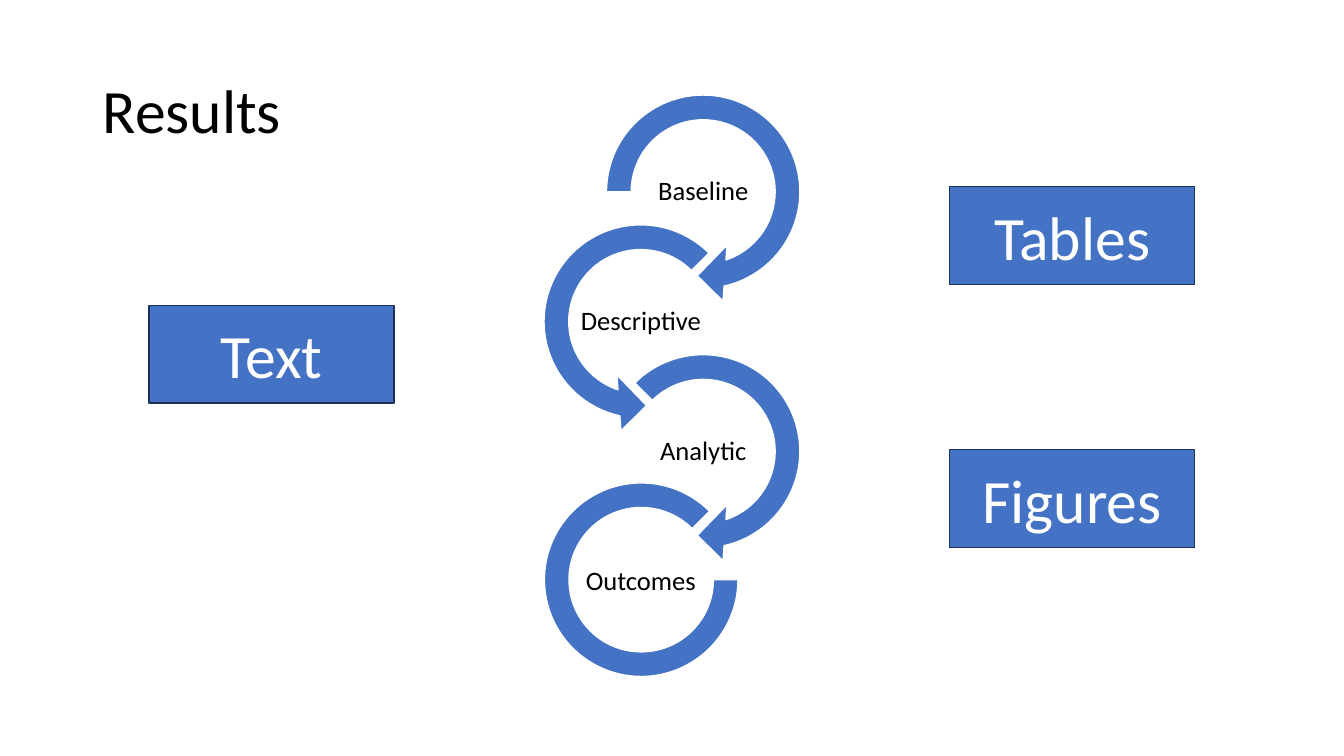
from pptx import Presentation
from pptx.dml.color import RGBColor
from pptx.enum.shapes import MSO_SHAPE as Preset
from pptx.enum.text import MSO_ANCHOR as Anchor, PP_ALIGN as Align
from pptx.util import Inches, Pt

WIDTH, HEIGHT = Inches(13.33), Inches(7.5)
BLUE, NAVY, WHITE, BLACK = "4472C4", "1E3256", "FFFFFF", "000000"

RING_LEFTS = (43.96, 39.31)
RING_TOP, RING_STEP = 10.5, 17.17
RING_SIZE = (16.73, 29.73)
ARC_INSET, ARC_SIZE = (1.2, 1.87), (14.4, 25.6)
LABEL_INSET, LABEL_SIZE = (3.68, 10.8), (9.38, 8.27)
BUTTON_SIZE = (18.23, 12.93)

STAGES = [
    ("Baseline", Preset.CIRCULAR_ARROW, (0.11, 11.42, 45, 108, 0.125)),
    ("Descriptive", Preset.LEFT_CIRCULAR_ARROW, (0.11, 11.42, 63, 189, 0.125)),
    ("Analytic", Preset.CIRCULAR_ARROW, (0.11, 11.42, 45, 135, 0.125)),
    ("Outcomes", Preset.BLOCK_ARC, (0, 189, 0.127)),
]
BUTTONS = [("Text", 11.1, 40.4), ("Tables", 70.67, 24.67), ("Figures", 70.67, 59.47)]

LABEL_FRAME = dict.fromkeys(
    ("margin_left", "margin_top", "margin_right", "margin_bottom"), Inches(0.01)
)
LABEL_PARA = {"alignment": Align.CENTER, "line_spacing": 0.9}


def color(value):
    return RGBColor.from_string(value)


def apply(target, values):
    for name, value in values.items():
        setattr(target, name, value)


def share(left, top, width, height):
    return [
        round(whole * percent / 100)
        for whole, percent in zip((WIDTH, HEIGHT) * 2, (left, top, width, height))
    ]


def shift(corner, inset):
    return corner[0] + inset[0], corner[1] + inset[1]


def write(box, text, size, ink, para_format, frame_format=None):
    frame = box.text_frame
    apply(frame, {"word_wrap": True, "vertical_anchor": Anchor.MIDDLE})
    apply(frame, frame_format or {})
    para = frame.paragraphs[0]
    apply(para, para_format)
    span = para.add_run()
    span.text = text
    apply(span.font, {"name": "Calibri", "size": Pt(size)})
    span.font.color.rgb = color(ink)


def add_figure(shapes, preset, corner, size, outline, adjustments=()):
    figure = shapes.add_shape(preset, *share(*corner, *size))
    figure.shadow.inherit = False
    figure.fill.solid()
    figure.fill.fore_color.rgb = color(BLUE)
    figure.line.color.rgb = color(outline)
    figure.line.width = Pt(1)
    for index, value in enumerate(adjustments):
        figure.adjustments[index] = value
    return figure


def add_text(shapes, text, corner, size, points, para_format, frame_format=None):
    box = shapes.add_textbox(*share(*corner, *size))
    write(box, text, points, BLACK, para_format, frame_format)


def add_stage(shapes, index, label, preset, adjustments):
    ring = (RING_LEFTS[index % 2], RING_TOP + index * RING_STEP)
    corner, size = ring, RING_SIZE
    if preset == Preset.BLOCK_ARC:
        corner, size = shift(ring, ARC_INSET), ARC_SIZE
    add_figure(shapes, preset, corner, size, WHITE, adjustments)
    add_text(shapes, label, shift(ring, LABEL_INSET), LABEL_SIZE, 19,
             LABEL_PARA, LABEL_FRAME)


def add_button(shapes, label, left, top):
    button = add_figure(shapes, Preset.RECTANGLE, (left, top), BUTTON_SIZE, NAVY)
    write(button, label, 44, WHITE, {"alignment": Align.CENTER})


def main():
    deck = Presentation()
    apply(deck, {"slide_width": WIDTH, "slide_height": HEIGHT})
    page = deck.slides.add_slide(deck.slide_layouts[6])
    chain = page.shapes.add_group_shape()
    for index, stage in enumerate(STAGES):
        add_stage(chain.shapes, index, *stage)
    add_text(page.shapes, "Results", (6.9, 5.33), (86.27, 19.33), 44,
             {"line_spacing": 0.9})
    for button in BUTTONS:
        add_button(page.shapes, *button)
    deck.save("out.pptx")


if __name__ == "__main__":
    main()
